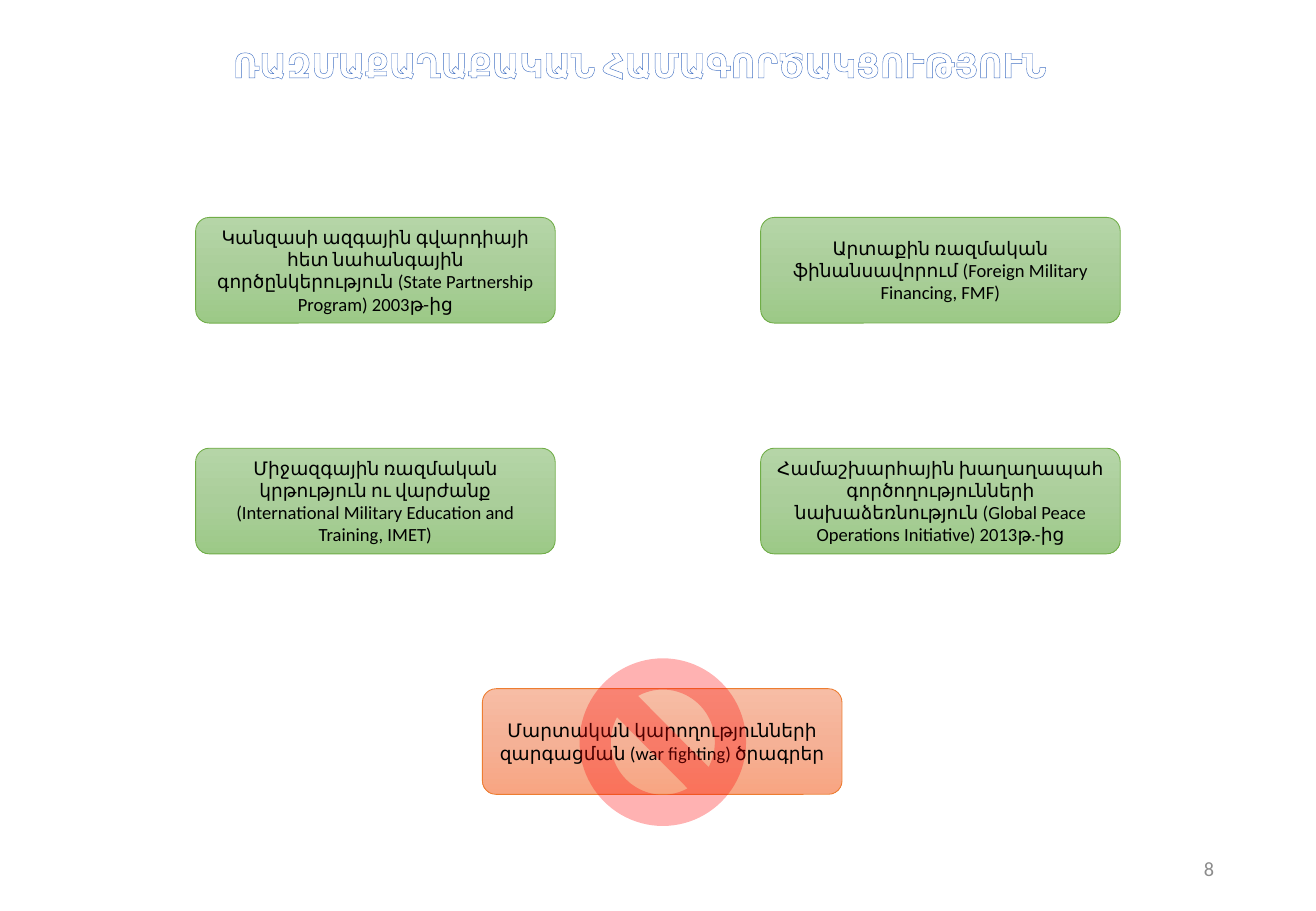
from copy import deepcopy

from lxml import etree
from pptx import Presentation
from pptx.dml.color import RGBColor
from pptx.enum.shapes import MSO_SHAPE
from pptx.enum.text import MSO_ANCHOR, MSO_AUTO_SIZE, PP_ALIGN
from pptx.oxml.ns import qn
from pptx.util import Pt

ROUND, BAN = MSO_SHAPE.ROUNDED_RECTANGLE, MSO_SHAPE.NO_SYMBOL
MIDDLE, FIXED = MSO_ANCHOR.MIDDLE, MSO_AUTO_SIZE.NONE
CENTER, RIGHT = PP_ALIGN.CENTER, PP_ALIGN.RIGHT
PX = 9144  # 100 px to the inch
FONT = "Calibri"
TITLE_ONLY = 5

HEX = {
    "white": "FFFFFF", "black": "000000", "gray": "8C8C8C",
    "blue": "4472C4", "green": "70AD47", "orange": "ED7D31", "red": "FF0000",
}
FADES = {
    "green": ("B5D5A7", "AACE9A", "9CC987"),
    "orange": ("F7BDA5", "F5B196", "F8A582"),
}

# Program grid
LEFT, TOP, STEP_X, STEP_Y = 161, 179, 465, 190
BOX_W, BOX_H, INSET = 296, 87, 7
PROGRAMS = [
    "Կանզասի ազգային գվարդիայի հետ նահանգային գործընկերություն (State Partnership Program) 2003թ-ից",
    "Արտաքին ռազմական ֆինանսավորում (Foreign Military Financing, FMF)",
    "Միջազգային ռազմական կրթություն ու վարժանք (International Military Education and Training, IMET)",
    "Համաշխարհային խաղաղապահ գործողությունների նախաձեռնություն (Global Peace Operations Initiative) 2013թ.-ից",
]


def rgb(name):
    return RGBColor.from_string(HEX[name])


def emu(*sizes):
    return [size * PX for size in sizes]


def write(shape, text, size, color, align, bold=False):
    frame = shape.text_frame
    frame.word_wrap = True
    frame.auto_size = FIXED
    frame.vertical_anchor = MIDDLE
    frame.text = text
    para = frame.paragraphs[0]
    para.alignment = align
    font = para.font
    font.name, font.size, font.bold = FONT, Pt(size), bold
    font.color.rgb = rgb(color)
    return para


def add_title(slide, text):
    title = slide.shapes.title
    title.left, title.top, title.width, title.height = emu(29, 31, 995, 44)
    para = write(title, text, 20, "white", CENTER, True)
    # Outlined letters
    props = para.runs[0].font._element
    line = etree.Element(qn("a:ln"), w=str(Pt(0.8)))
    fill = etree.SubElement(line, qn("a:solidFill"))
    etree.SubElement(fill, qn("a:srgbClr"), val=HEX["blue"])
    props.insert(0, line)


def shade(shape, colors):
    fill = shape.fill
    fill.gradient()
    fill.gradient_angle = 270
    stops = shape._element.spPr.find(".//" + qn("a:gsLst"))
    stops.append(deepcopy(stops[0]))
    for i, (stop, color) in enumerate(zip(fill.gradient_stops, colors)):
        stop.position = i / 2
        stop.color.rgb = RGBColor.from_string(color)


def add_box(slide, left, top, text, color):
    box = slide.shapes.add_shape(ROUND, *emu(left, top, BOX_W, BOX_H))
    box.adjustments[0] = 0.13
    box.shadow.inherit = False
    shade(box, FADES[color])
    box.line.color.rgb = rgb(color)
    box.line.width = Pt(0.5)
    write(box, text, 11, "black", CENTER)
    frame = box.text_frame
    frame.margin_left = frame.margin_right = INSET * PX
    frame.margin_top = frame.margin_bottom = INSET * PX


def add_ban(slide):
    ban = slide.shapes.add_shape(BAN, *emu(477, 542, 137, 138))
    ban.shadow.inherit = False
    ban.fill.solid()
    ban.fill.fore_color.rgb = rgb("red")
    ban.line.fill.background()
    # Transparency
    color = ban._element.spPr.find(".//" + qn("a:srgbClr"))
    etree.SubElement(color, qn("a:alpha"), val="30000")


def add_number(slide, text):
    box = slide.shapes.add_textbox(*emu(765, 695, 244, 40))
    write(box, text, 12, "gray", RIGHT)


def main():
    prs = Presentation()
    prs.slide_width, prs.slide_height = emu(1083, 750)
    slide = prs.slides.add_slide(prs.slide_layouts[TITLE_ONLY])
    add_title(slide, "ՌԱԶՄԱՔԱՂԱՔԱԿԱՆ ՀԱՄԱԳՈՐԾԱԿՑՈՒԹՅՈՒՆ")

    # Running programs, two to a row
    for i, text in enumerate(PROGRAMS):
        row, col = divmod(i, 2)
        add_box(slide, LEFT + col * STEP_X, TOP + row * STEP_Y, text, "green")

    # Excluded programs
    add_box(slide, 397, 567, "Մարտական կարողությունների զարգացման (war fighting) ծրագրեր", "orange")
    add_ban(slide)
    add_number(slide, "8")
    prs.save("out.pptx")


if __name__ == "__main__":
    main()
